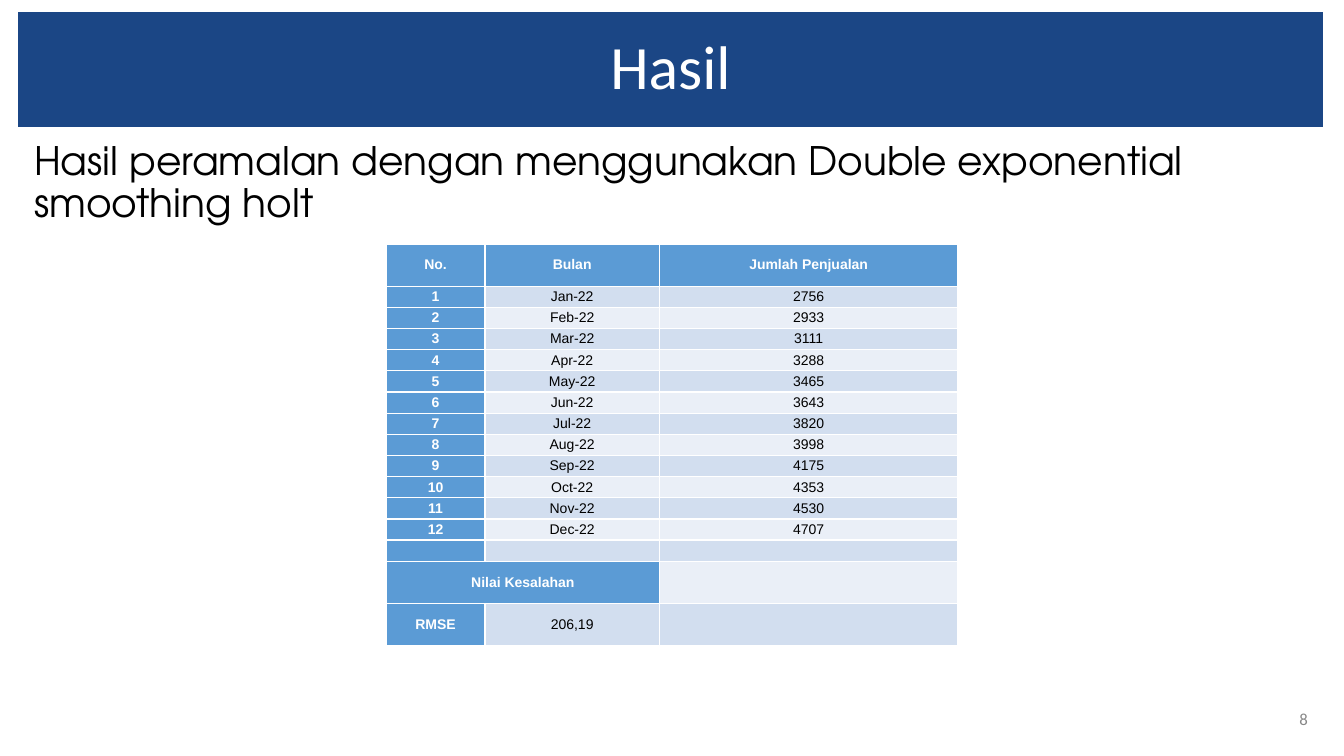
from lxml.etree import SubElement
from pptx import Presentation
from pptx.dml.color import RGBColor
from pptx.enum.text import MSO_ANCHOR, MSO_AUTO_SIZE, PP_ALIGN
from pptx.oxml.ns import qn
from pptx.util import Inches, Pt

NAVY = RGBColor(0x1B, 0x46, 0x85)
BLUE = RGBColor(0x5B, 0x9B, 0xD5)
BAND_DARK = RGBColor(0xD2, 0xDE, 0xEF)
BAND_LIGHT = RGBColor(0xEA, 0xEF, 0xF7)
WHITE = RGBColor(0xFF, 0xFF, 0xFF)
BLACK = RGBColor(0, 0, 0)
GREY = RGBColor(0x88, 0x88, 0x88)

PAGE_WIDTH, PAGE_HEIGHT = 13.33, 7.5
MARGIN, BAND_WIDTH = 0.18, 12.94
COLUMN_WIDTHS = [0.98, 1.73, 2.96]
TALL, SHORT = 0.42, 0.21


def place(shape, *lengths):
    for name, length in zip(("left", "top", "width", "height"), lengths):
        setattr(shape, name, Inches(length))


def write(frame, text, color, **formats):
    """Fill the first paragraph and return it."""
    para = frame.paragraphs[0]
    span = para.add_run()
    span.text = text
    span.font.color.rgb = color
    for name, value in formats.items():
        setattr(span.font, name, value)
    return para


deck = Presentation()
deck.slide_width, deck.slide_height = Inches(PAGE_WIDTH), Inches(PAGE_HEIGHT)
page = deck.slides.add_slide(deck.slide_layouts[1])

# Title band
title = page.shapes.title
place(title, MARGIN, 0.12, BAND_WIDTH, 1.14)
title.fill.solid()
title.fill.fore_color.rgb = NAVY
title.text_frame.auto_size = MSO_AUTO_SIZE.NONE
title.text_frame.vertical_anchor = MSO_ANCHOR.MIDDLE
para = write(title.text_frame, "Hasil", WHITE, size=Pt(44), name="Calibri")
para.alignment = PP_ALIGN.CENTER
para.line_spacing = 0.9

# Introductory sentence, without a bullet
body = page.placeholders[1]
place(body, MARGIN, 1.35, BAND_WIDTH, 5.57)
body.text_frame.auto_size = MSO_AUTO_SIZE.NONE
para = write(body.text_frame,
             "Hasil peramalan dengan menggunakan Double exponential smoothing holt",
             BLACK, size=Pt(28), name="TeX Gyre Adventor")
para.line_spacing = 0.9
para.space_before = Pt(0)
properties = para._p.get_or_add_pPr()
properties.set("marL", str(Inches(0.06)))
properties.set("indent", "0")
SubElement(properties, qn("a:buNone"))

# Forecast rows: number, month, sales
months = "Jan Feb Mar Apr May Jun Jul Aug Sep Oct Nov Dec".split()
sales = [2756, 2933, 3111, 3288, 3465, 3643, 3820, 3998, 4175, 4353, 4530, 4707]
rows = [("No.", "Bulan", "Jumlah Penjualan")]
rows += [(str(number), f"{month}-22", str(amount))
         for number, (month, amount) in enumerate(zip(months, sales), 1)]
rows += [("", "", ""), ("Nilai Kesalahan", "", ""), ("RMSE", "206,19", "")]
heights = [TALL] + [SHORT] * (len(months) + 1) + [TALL] * 2

# Table, centred on the page
table_width = sum(COLUMN_WIDTHS)
table = page.shapes.add_table(
    len(rows), len(COLUMN_WIDTHS), Inches((PAGE_WIDTH - table_width) / 2),
    Inches(2.42), Inches(table_width), Inches(sum(heights))).table
table.first_col = True
for column, width in zip(table.columns, COLUMN_WIDTHS):
    column.width = Inches(width)
for row_index, (texts, height) in enumerate(zip(rows, heights)):
    table.rows[row_index].height = Inches(height)
    for column_index, text in enumerate(texts):
        cell = table.cell(row_index, column_index)
        heading = row_index == 0 or column_index == 0
        band = BAND_DARK if row_index % 2 else BAND_LIGHT
        cell.fill.solid()
        cell.fill.fore_color.rgb = BLUE if heading else band
        cell_format = {"margin_left": Inches(0.07), "margin_right": Inches(0.07),
                       "margin_top": 0, "margin_bottom": 0,
                       "vertical_anchor": MSO_ANCHOR.MIDDLE}
        for name, value in cell_format.items():
            setattr(cell, name, value)
        if text:
            para = write(cell.text_frame, text, WHITE if heading else BLACK,
                         size=Pt(10), name="Arial", bold=heading)
            para.alignment = PP_ALIGN.CENTER
        else:  # keeps an empty row short
            SubElement(cell.text_frame.paragraphs[0]._p, qn("a:endParaRPr"), sz="1000")
error_row = len(rows) - 2
table.cell(error_row, 0).merge(table.cell(error_row, 1))

# Page number
number_box = page.shapes.add_textbox(
    Inches(12.5), Inches(6.93), Inches(0.57), Inches(0.4))
number_box.text_frame.word_wrap = True
number_box.text_frame.vertical_anchor = MSO_ANCHOR.MIDDLE
para = write(number_box.text_frame, "8", GREY, size=Pt(12), name="Calibri")
para.alignment = PP_ALIGN.RIGHT

deck.save("out.pptx")
